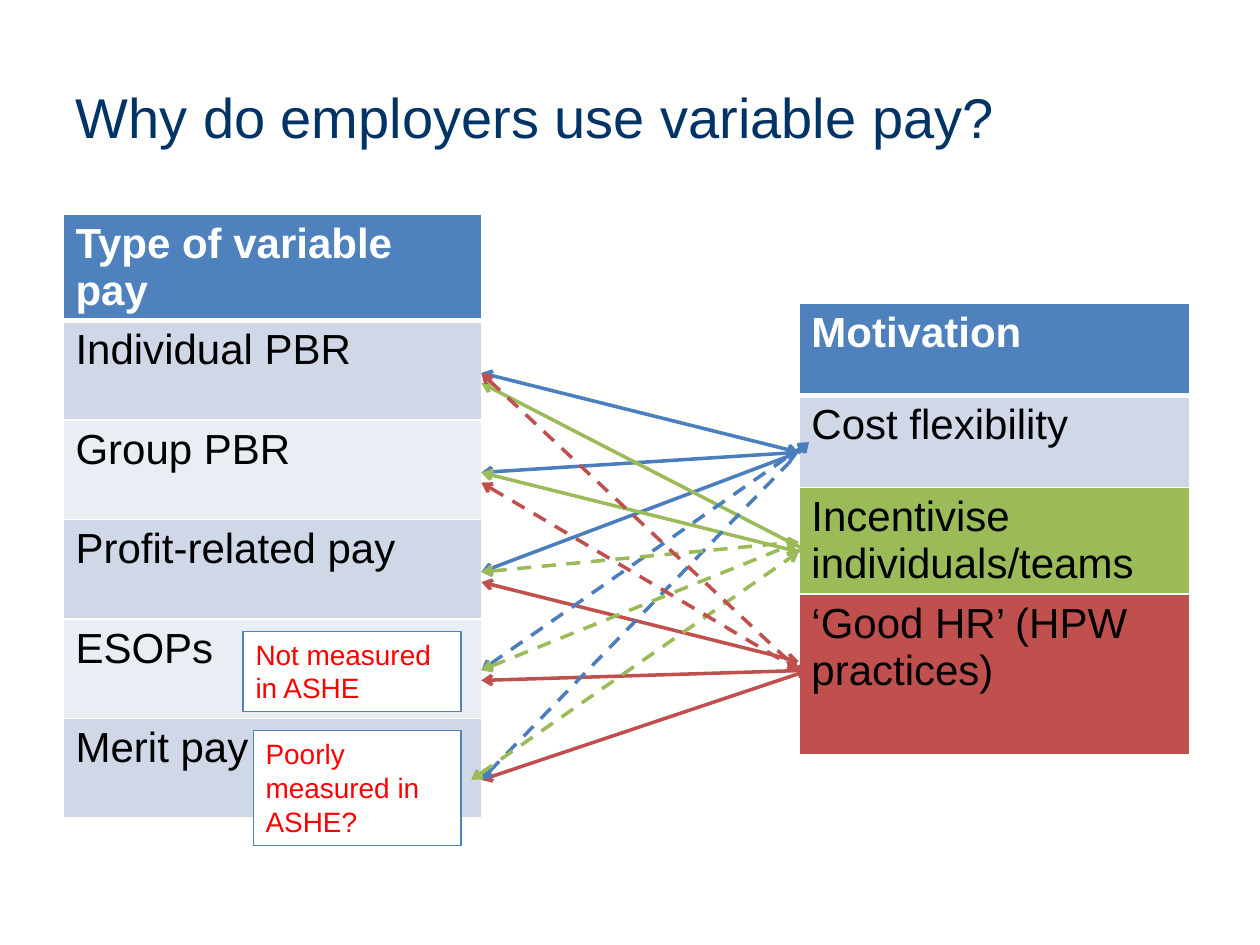
from lxml.etree import SubElement
from pptx import Presentation
from pptx.dml.color import RGBColor
from pptx.enum.dml import MSO_LINE as Dash
from pptx.enum.shapes import MSO_CONNECTOR as Connector, MSO_SHAPE as Shape
from pptx.enum.text import MSO_ANCHOR as Anchor, MSO_AUTO_SIZE as AutoSize, PP_ALIGN as Align
from pptx.oxml.ns import qn
from pptx.util import Inches, Pt

rgb = RGBColor.from_string


def write(frame, text, size=24, color="000000", bold=False, anchor=Anchor.TOP):
    frame.word_wrap = True
    frame.vertical_anchor = anchor
    paragraph = frame.paragraphs[0]
    paragraph.alignment = Align.LEFT
    run = paragraph.add_run()
    run.text = text
    run.font.name = "Arial"
    run.font.size = Pt(size)
    run.font.bold = bold
    run.font.color.rgb = rgb(color)


def add_border(cell, side, width):
    line = SubElement(cell._tc.get_or_add_tcPr(), qn(f"a:ln{side}"), w=str(Pt(width)))
    fill = SubElement(line, qn("a:solidFill"))
    SubElement(fill, qn("a:srgbClr"), val="FFFFFF")


HEADER, BAND, PALE = "4F81BD", "D0D8E8", "E9EDF4"
BLUE, GREEN, RED = "4B7EBC", "9BBB59", "C0504D"

prs = Presentation()
prs.slide_width, prs.slide_height = Inches(10), Inches(7.5)
slide = prs.slides.add_slide(prs.slide_layouts[5])

title = slide.shapes.title
title.left, title.top = Inches(0.5), Inches(0.3)
title.width, title.height = Inches(7.96), Inches(1.24)
write(title.text_frame, "Why do employers use variable pay?", size=32, color="003366",
      anchor=Anchor.MIDDLE)

tables = [
    (0.5, 1.7, 3.32, [
        ("Type of variable pay", HEADER, 0.79),
        ("Individual PBR", BAND, 0.79),
        ("Group PBR", PALE, 0.79),
        ("Profit-related pay", BAND, 0.79),
        ("ESOPs", PALE, 0.79),
        ("Merit pay", BAND, 0.79),
    ]),
    (6.34, 2.41, 3.1, [
        ("Motivation", HEADER, 0.73),
        ("Cost flexibility", BAND, 0.73),
        ("Incentivise individuals/teams", GREEN, 0.73),
        ("‘Good HR’ (HPW practices)", RED, 1.28),
    ]),
]
for left, top, width, rows in tables:
    total = sum(height for _, _, height in rows)
    table = slide.shapes.add_table(len(rows), 1, Inches(left), Inches(top),
                                   Inches(width), Inches(total)).table
    table.horz_banding = False
    for index, (label, fill, height) in enumerate(rows):
        table.rows[index].height = Inches(height)
        cell = table.cell(index, 0)
        is_header = index == 0
        for side in "LRTB":
            heavy = (is_header and side == "B") or (index == 1 and side == "T")
            add_border(cell, side, 3 if heavy else 1)
        cell.fill.solid()
        cell.fill.fore_color.rgb = rgb(fill)
        write(cell.text_frame, label, color="FFFFFF" if is_header else "000000", bold=is_header)

links = [
    (BLUE, Dash.SOLID, [(3.82, 2.96, 6.34, 3.59), (3.82, 3.75, 6.34, 3.59),
                        (3.82, 4.54, 6.34, 3.59)]),
    (GREEN, Dash.SOLID, [(3.82, 3.04, 6.42, 4.38), (3.82, 3.75, 6.34, 4.38)]),
    (RED, Dash.SOLID, [(3.82, 6.19, 6.42, 5.32), (3.82, 4.62, 6.34, 5.25),
                       (3.82, 5.4, 6.42, 5.32)]),
    (BLUE, Dash.DASH, [(3.82, 5.32, 6.42, 3.51), (3.82, 6.19, 6.42, 3.51)]),
    (GREEN, Dash.DASH, [(3.82, 4.54, 6.34, 4.3), (3.82, 5.32, 6.34, 4.3),
                        (3.74, 6.19, 6.34, 4.38)]),
    (RED, Dash.DASH, [(3.82, 2.96, 6.34, 5.32), (3.82, 3.83, 6.34, 5.32)]),
]
for color, dash, routes in links:
    for route in routes:
        link = slide.shapes.add_connector(Connector.STRAIGHT, *map(Inches, route))
        link.line.color.rgb = rgb(color)
        link.line.width = Pt(2)
        link.line.dash_style = dash
        for end in ("headEnd", "tailEnd"):
            SubElement(link.line._get_or_add_ln(), qn(f"a:{end}"), type="arrow")
        SubElement(link._element.spPr, qn("a:effectLst"))

notes = [
    ("Not measured in ASHE", 1.93, 5.01, 1.73, 0.64),
    ("Poorly measured in ASHE?", 2.01, 5.8, 1.65, 0.91),
]
for remark, *box in notes:
    note = slide.shapes.add_shape(Shape.RECTANGLE, *map(Inches, box))
    note.shadow.inherit = False
    note.fill.solid()
    note.fill.fore_color.rgb = rgb("FFFFFF")
    note.line.color.rgb = rgb(HEADER)
    note.line.width = Pt(0.75)
    note.text_frame.auto_size = AutoSize.SHAPE_TO_FIT_TEXT
    write(note.text_frame, remark, size=16, color="FF0000")

prs.save("out.pptx")
